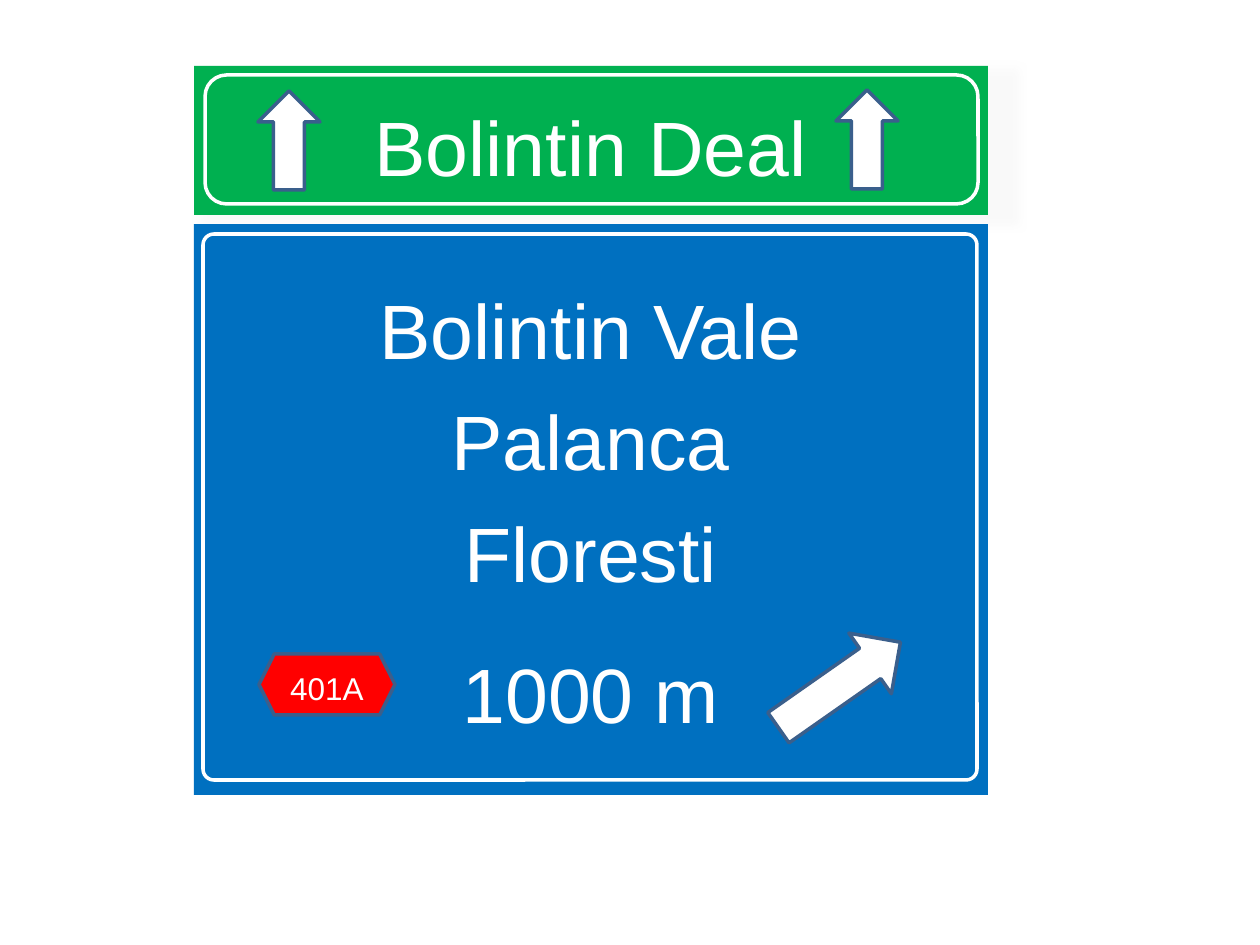
"""Build a motorway exit sign slide."""
from lxml.etree import SubElement
from pptx import Presentation
from pptx.dml.color import RGBColor as RGB
from pptx.enum.shapes import MSO_SHAPE as SHAPE
from pptx.enum.text import MSO_ANCHOR as ANCHOR, PP_ALIGN as ALIGN
from pptx.oxml.ns import qn
from pptx.util import Emu, Pt

COLORS = {"green": "00B050", "blue": "0070C0", "red": "FF0000",
          "white": "FFFFFF", "edge": "3A5F8C", "shadow": "F2F2F2"}


def px(n):
    return Emu(round(n * 914400 / 126))


def rgb(name):
    return RGB.from_string(COLORS[name])


class Sign:
    font = "Arial"
    line_width = Pt(2)

    def __init__(self, prs):
        self.s = prs.slides.add_slide(prs.slide_layouts[5])

    def paint(self, sp, fill=None, line=None):
        if fill:
            sp.fill.solid()
            sp.fill.fore_color.rgb = rgb(fill)
        else:
            sp.fill.background()
        if line:
            sp.line.color.rgb = rgb(line)
            sp.line.width = self.line_width
        else:
            sp.line.fill.background()

    def label(self, sp, lines, size, top=6, anchor=ANCHOR.MIDDLE):
        tf = sp.text_frame
        tf.word_wrap = True
        tf.vertical_anchor = anchor
        tf.margin_top, tf.margin_bottom = px(top), 0
        for i, (text, gap) in enumerate(lines):
            p = tf.add_paragraph() if i else tf.paragraphs[0]
            p.text = text
            p.alignment = ALIGN.CENTER
            p.space_before = Pt(gap)
            p.font.name, p.font.size = self.font, Pt(size)
            p.font.color.rgb = rgb("white")

    def title(self, box, text, fill):
        sp = self.s.shapes.title
        sp.left, sp.top, sp.width, sp.height = map(px, box)
        self.paint(sp, fill)
        self.label(sp, [(text, 0)], 44, top=10)
        effects = SubElement(sp._element.spPr, qn("a:effectLst"))
        shadow = SubElement(effects, qn("a:outerShdw"), blurRad="63500", sx="103000",
                            sy="104000", algn="tl", rotWithShape="0")
        color = SubElement(shadow, qn("a:srgbClr"), val=COLORS["shadow"])
        SubElement(color, qn("a:alpha"), val="40000")

    def shape(self, kind, box, fill=None, line=None, rotation=0, adj=None):
        sp = self.s.shapes.add_shape(kind, *map(px, box))
        sp.shadow.inherit = False
        sp.rotation = rotation
        if adj is not None:
            sp.adjustments[0] = adj
        self.paint(sp, fill, line)
        return sp


def main():
    prs = Presentation()
    prs.slide_width, prs.slide_height = px(1260), px(945)
    sign = Sign(prs)

    sign.title((194, 66, 794, 149), "Bolintin Deal", "green")
    panel = sign.shape(SHAPE.RECTANGLE, (194, 224, 794, 571), "blue")
    places = [("Bolintin Vale", 0), ("Palanca", 11), ("Floresti", 11), ("1000 m", 28)]
    sign.label(panel, places, 44, top=58, anchor=ANCHOR.TOP)

    sign.shape(SHAPE.RIGHT_ARROW, (765, 648, 149, 74), "white", "edge", rotation=325)
    for left, top in ((258, 91), (836, 90)):
        sign.shape(SHAPE.UP_ARROW, (left, top, 62, 99), "white", "edge")

    badge = sign.shape(SHAPE.HEXAGON, (259, 654, 136, 61), "red", "edge")
    sign.label(badge, [("401A", 0)], 18)

    sign.shape(SHAPE.ROUNDED_RECTANGLE, (205, 75, 773, 129), line="white")
    sign.shape(SHAPE.ROUNDED_RECTANGLE, (203, 234, 774, 546), line="white", adj=0.02)
    prs.save("out.pptx")


if __name__ == "__main__":
    main()
